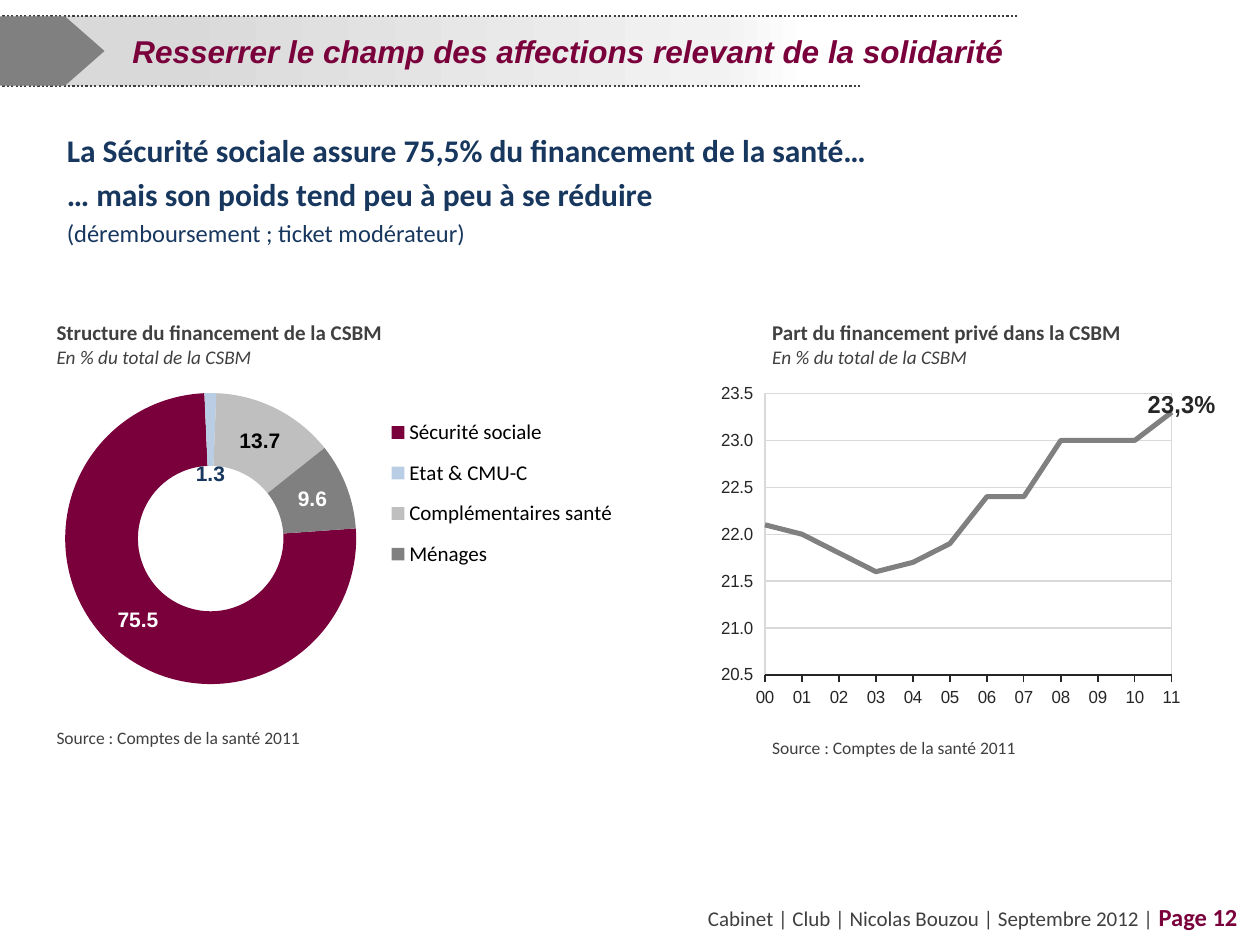
from lxml import etree
from pptx import Presentation
from pptx.chart.data import CategoryChartData
from pptx.dml.color import RGBColor
from pptx.enum.chart import XL_CHART_TYPE, XL_LABEL_POSITION, XL_LEGEND_POSITION, XL_MARKER_STYLE, XL_TICK_MARK
from pptx.enum.dml import MSO_LINE
from pptx.enum.shapes import MSO_CONNECTOR, MSO_SHAPE
from pptx.enum.text import MSO_ANCHOR, MSO_AUTO_SIZE, PP_ALIGN
from pptx.oxml import parse_xml
from pptx.oxml.ns import nsdecls, qn
from pptx.util import Inches, Pt

COLORS = {"plum": "7A003C", "navy": "17375E", "text": "404040", "ink": "262626", "black": "000000",
          "white": "FFFFFF", "gray": "808080", "silver": "BFBFBF", "sky": "B9CDE5", "grid": "D9D9D9",
          "mist": "F2F2F2"}

TITLE = "Resserrer le champ des affections relevant de la solidarité"
TITLE_FORMAT = {"name": "Arial", "size": 18, "bold": True, "italic": True, "color": "plum"}
TITLE_GRADIENT = [(14, "grid"), (62, "mist"), (70, "white")]
HEADER_TOP, HEADER_HEIGHT = 0.13, 0.55
HEADER_RULES = [(HEADER_TOP, 8.09), (HEADER_TOP + HEADER_HEIGHT, 6.83)]

KEY_FORMAT = {"name": "Calibri", "size": 18, "bold": True, "color": "navy"}
KEY_POINTS = [
    ("La Sécurité sociale assure 75,5% du financement de la santé…", KEY_FORMAT),
    ("… mais son poids tend peu à peu à se réduire", KEY_FORMAT),
    ("(déremboursement ; ticket modérateur)", {**KEY_FORMAT, "size": 14, "bold": False}),
]

HEADING_FORMAT = {"name": "Calibri", "size": 12, "bold": True, "color": "text"}
UNIT_FORMAT = {"name": "Calibri", "size": 11, "italic": True, "color": "text"}
SOURCE_FORMAT = {"name": "Calibri", "size": 10, "color": "text"}
UNIT = "En % du total de la CSBM"
SOURCE = "Source : Comptes de la santé 2011"
PANELS = [
    {"heading": "Structure du financement de la CSBM", "left": 0.35, "width": 4.09, "source_top": 5.72},
    {"heading": "Part du financement privé dans la CSBM", "left": 6.03, "width": 3.31, "source_top": 5.8},
]

FUNDING = [  # category, share, slice colour, label colour
    ("Sécurité sociale", 75.5, "plum", "white"),
    ("Etat & CMU-C", 1.3, "sky", "navy"),
    ("Complémentaires santé", 13.7, "silver", "black"),
    ("Ménages", 9.6, "gray", "white"),
]
PRIVATE_SHARE = [22.1, 22, 21.8, 21.6, 21.7, 21.9, 22.4, 22.4, 23, 23, 23, 23.3]

FOOTER = [
    ("Cabinet | Club | Nicolas Bouzou | Septembre 2012 | ", {"name": "Calibri", "size": 12, "color": "text"}),
    ("Page 12", {"name": "Calibri", "size": 14, "bold": True, "color": "plum"}),
]


def rgb(name):
    return RGBColor.from_string(COLORS[name])


def apply_font(font, formats):
    for key, value in formats.items():
        if key == "color":
            font.color.rgb = rgb(value)
        else:
            setattr(font, key, Pt(value) if key == "size" else value)


def place(shape, left, top, width, height):
    for key, value in zip(("left", "top", "width", "height"), (left, top, width, height)):
        setattr(shape, key, Inches(value))


def write_paragraphs(frame, paragraphs, align=PP_ALIGN.LEFT):
    """Fill a text frame; each paragraph is a list of (text, format) runs."""
    frame.word_wrap = True
    frame.auto_size = MSO_AUTO_SIZE.NONE
    for index, runs in enumerate(paragraphs):
        paragraph = frame.paragraphs[0] if index == 0 else frame.add_paragraph()
        paragraph.alignment = align
        for text, formats in runs:
            run = paragraph.add_run()
            run.text = text
            apply_font(run.font, formats)


def add_text(slide, box, paragraphs, align=PP_ALIGN.LEFT):
    shape = slide.shapes.add_textbox(*map(Inches, box))
    write_paragraphs(shape.text_frame, paragraphs, align)


def layout_xml(inner=False, **fractions):
    """Manual chart layout; x, y, w and h are fractions of the chart."""
    layout = etree.Element(qn("c:layout"))
    manual = etree.SubElement(layout, qn("c:manualLayout"))
    modes = {"layoutTarget": "inner"} if inner else {}
    if "w" in fractions:
        modes.update(xMode="edge", yMode="edge")
    for key, value in {**modes, **fractions}.items():
        etree.SubElement(manual, qn(f"c:{key}"), val=str(value))
    return layout


def add_chart(slide, kind, box, categories, values, plot_layout):
    data = CategoryChartData(number_format="0.0")
    data.categories = categories
    data.add_series("Series 1", values)
    chart = slide.shapes.add_chart(kind, *map(Inches, box), data).chart
    chart.has_title = False
    chart.has_legend = False
    apply_font(chart.font, {"name": "Arial", "size": 10, "color": "ink"})
    area = chart._chartSpace.chart.plotArea
    for old in area.findall(qn("c:layout")):
        area.remove(old)
    area.insert(0, layout_xml(inner=True, **plot_layout))
    return chart


def shift_label(series, index, x, y):
    for label in series._element.iter(qn("c:dLbl")):
        if label.find(qn("c:idx")).get("val") == str(index):
            for old in label.findall(qn("c:layout")):
                label.remove(old)
            label.insert(1, layout_xml(x=x, y=y))


def add_header(slide):
    title = slide.shapes.title
    place(title, 0.02, HEADER_TOP, 9.15, HEADER_HEIGHT)
    frame = title.text_frame
    write_paragraphs(frame, [[(TITLE, TITLE_FORMAT)]])
    frame.vertical_anchor = MSO_ANCHOR.MIDDLE
    frame.margin_left = Inches(1.03)
    stops = "".join(f'<a:gs pos="{position * 1000}"><a:srgbClr val="{COLORS[name]}"/></a:gs>'
                    for position, name in TITLE_GRADIENT)
    title._element.spPr.append(parse_xml(
        f'<a:gradFill {nsdecls("a")}><a:gsLst>{stops}</a:gsLst><a:lin ang="0" scaled="0"/></a:gradFill>'))
    for top, right in HEADER_RULES:
        rule = slide.shapes.add_connector(
            MSO_CONNECTOR.STRAIGHT, Inches(0.02), Inches(top), Inches(right), Inches(top))
        rule.line.color.rgb = rgb("text")
        rule.line.width = Pt(1.25)
        rule.line.dash_style = MSO_LINE.ROUND_DOT
        etree.SubElement(rule._element.spPr, qn("a:effectLst"))
    arrow = slide.shapes.add_shape(
        MSO_SHAPE.PENTAGON, 0, Inches(HEADER_TOP), Inches(0.83), Inches(HEADER_HEIGHT))
    arrow.adjustments[0] = 0.57
    arrow.shadow.inherit = False
    arrow.fill.solid()
    arrow.fill.fore_color.rgb = rgb("gray")
    arrow.line.fill.background()


def add_key_points(slide):
    body = slide.placeholders[1]
    place(body, 0.43, 0.99, 7.8, 1.02)
    write_paragraphs(body.text_frame, [[point] for point in KEY_POINTS])
    for index, paragraph in enumerate(body.text_frame.paragraphs):
        properties = paragraph._p.get_or_add_pPr()
        properties.set("marL", "0")
        properties.set("indent", "0")
        etree.SubElement(properties, qn("a:buNone"))
        paragraph.space_before = Pt(0.2 * KEY_POINTS[index][1]["size"] if index else 0)


def add_funding_chart(slide):
    categories, shares, fills, label_colors = zip(*FUNDING)
    chart = add_chart(slide, XL_CHART_TYPE.DOUGHNUT, (0.28, 2.88, 4.72, 3), categories, shares,
                      {"x": 0.03, "y": 0.08, "w": 0.53, "h": 0.77})
    chart.has_legend = True
    chart.legend.position = XL_LEGEND_POSITION.RIGHT
    chart.legend.include_in_layout = False
    apply_font(chart.legend.font, {"name": "Calibri", "size": 12, "color": "black"})
    chart.legend._element.find(qn("c:legendPos")).addnext(layout_xml(x=0.58, y=0.11, w=0.41, h=0.47))
    plot = chart.plots[0]
    plot.vary_by_categories = True
    doughnut = plot._element
    for tag, value in (("c:firstSliceAng", 86), ("c:holeSize", 69)):
        node = doughnut.find(qn(tag))
        if node is None:
            node = etree.SubElement(doughnut, qn(tag))
        node.set("val", str(value))
    series = plot.series[0]
    series.data_labels.show_value = True
    for index, (fill, label_color) in enumerate(zip(fills, label_colors)):
        point = series.points[index]
        point.format.fill.solid()
        point.format.fill.fore_color.rgb = rgb(fill)
        point.format.line.fill.background()
        apply_font(point.data_label.font, {"name": "Arial", "size": 12, "bold": True, "color": label_color})
    shift_label(series, 1, 0, 0.12)


def add_private_share_chart(slide):
    years = [f"{year:02d}" for year in range(len(PRIVATE_SHARE))]
    chart = add_chart(slide, XL_CHART_TYPE.LINE, (5.56, 3.04, 4.09, 2.76), years, PRIVATE_SHARE,
                      {"x": 0.13, "y": 0.03, "w": 0.82, "h": 0.81})
    chart._chartSpace.chart.plotArea.append(parse_xml(
        f'<c:spPr {nsdecls("c", "a")}><a:noFill/><a:ln w="9525"><a:solidFill>'
        f'<a:srgbClr val="{COLORS["grid"]}"/></a:solidFill></a:ln></c:spPr>'))
    values, years_axis = chart.value_axis, chart.category_axis
    for key, value in {"minimum_scale": 20.5, "maximum_scale": 23.5, "major_unit": 0.5}.items():
        setattr(values, key, value)
    values.tick_labels.number_format = "0.0"
    values.tick_labels.number_format_is_linked = False
    values.format.line.fill.background()
    for line, color in ((values.major_gridlines.format.line, "grid"), (years_axis.format.line, "ink")):
        line.color.rgb = rgb(color)
        line.width = Pt(0.75)
    for axis in (values, years_axis):
        axis.major_tick_mark = XL_TICK_MARK.OUTSIDE
    cross = values._element.find(qn("c:crossBetween"))
    if cross is None:
        cross = etree.Element(qn("c:crossBetween"))
        values._element.find(qn("c:crosses")).addnext(cross)
    cross.set("val", "midCat")
    chart.plots[0].vary_by_categories = False
    series = chart.plots[0].series[0]
    series.smooth = False
    series.marker.style = XL_MARKER_STYLE.NONE
    series.format.line.color.rgb = rgb("gray")
    series.format.line.width = Pt(3)
    series.data_labels.show_value = False
    last = len(PRIVATE_SHARE) - 1
    label = series.points[last].data_label
    run = label.text_frame.paragraphs[0].add_run()
    run.text = "23,3%"
    apply_font(run.font, {"name": "Arial", "size": 14, "bold": True, "color": "ink"})
    label.position = XL_LABEL_POSITION.CENTER
    shift_label(series, last, 0.02, -0.02)


def main():
    presentation = Presentation()
    presentation.slide_width, presentation.slide_height = Inches(10), Inches(7.5)
    slide = presentation.slides.add_slide(presentation.slide_layouts[1])
    add_header(slide)
    add_key_points(slide)
    add_funding_chart(slide)
    add_private_share_chart(slide)
    for panel in PANELS:
        add_text(slide, (panel["left"], 2.49, panel["width"], 0.49),
                 [[(panel["heading"], HEADING_FORMAT)], [(UNIT, UNIT_FORMAT)]])
        add_text(slide, (panel["left"], panel["source_top"], 2.91, 0.27), [[(SOURCE, SOURCE_FORMAT)]])
    add_text(slide, (2.8, 7.11, 7.12, 0.39), [FOOTER], PP_ALIGN.RIGHT)
    presentation.save("out.pptx")


if __name__ == "__main__":
    main()
